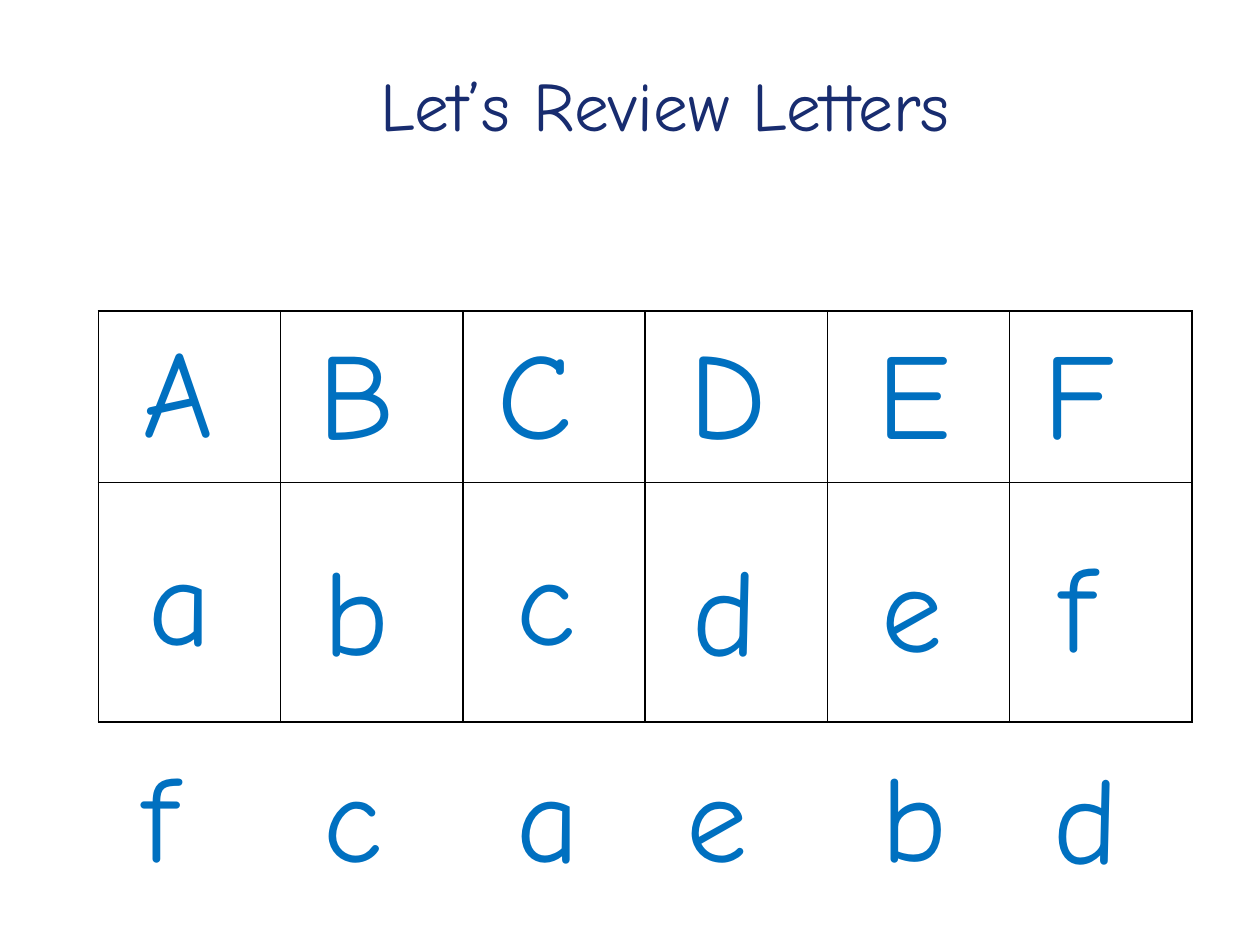
from lxml import etree
from pptx import Presentation
from pptx.dml.color import RGBColor
from pptx.enum.text import MSO_ANCHOR, MSO_AUTO_SIZE, PP_ALIGN
from pptx.oxml.ns import qn
from pptx.util import Inches, Pt

TITLE = "Let’s Review Letters"
LETTER_ROWS = [
    (2.47, [("A", 1.03, 1.38), ("B", 2.43, 1.38), ("C", 3.85, 1.38),
            ("D", 5.37, 1.38), ("E", 6.87, 1.17), ("F", 8.18, 1.53)]),
    (4.16, [("a", 1.08, 1.28), ("b", 2.47, 1.28), ("c", 4, 1.28),
            ("d", 5.4, 1.28), ("e", 6.9, 1.17), ("f", 8.31, 1.28)]),
    (5.82, [("f", 1.03, 1.38), ("c", 2.47, 0.71), ("a", 4, 0.71),
            ("e", 5.35, 0.97), ("b", 6.9, 0.78), ("d", 8.26, 0.67)]),
]
NUDGES = {("A", 2.47): -0.02, ("a", 4.16): -0.06, ("c", 4.16): -0.06,
          ("b", 4.16): 0.03, ("d", 4.16): 0.03, ("d", 5.82): 0.02}

FONT = "Comic Neue"
NAVY = RGBColor(0x18, 0x2C, 0x6F)
BLUE = RGBColor(0x00, 0x70, 0xC0)
BLACK = RGBColor(0, 0, 0)
LEFT = 0.78
LETTER_HEIGHT = 1.28
GRID_TOP, GRID_WIDTH = 2.47, 8.68
ROW_HEIGHTS = [1.36, 1.9]
COLUMNS = 6
BORDER_SIDES = ("a:lnL", "a:lnR", "a:lnT", "a:lnB")


def write(frame, text, size, color, align=PP_ALIGN.LEFT):
    frame.word_wrap = True
    frame.vertical_anchor = MSO_ANCHOR.TOP
    paragraph = frame.paragraphs[0]
    paragraph.alignment = align
    run = paragraph.add_run()
    run.text = text
    run.font.name = FONT
    run.font.size = Pt(size)
    run.font.color.rgb = color


def outline(cell):
    cell.fill.background()
    properties = cell._tc.get_or_add_tcPr()
    for position, side in enumerate(BORDER_SIDES):
        line = etree.Element(qn(side), w=str(Pt(1)))
        fill = etree.SubElement(line, qn("a:solidFill"))
        etree.SubElement(fill, qn("a:srgbClr"), val=str(BLACK))
        properties.insert(position, line)


def add_grid(slide):
    grid = slide.shapes.add_table(
        len(ROW_HEIGHTS), COLUMNS, Inches(LEFT), Inches(GRID_TOP),
        Inches(GRID_WIDTH), Inches(sum(ROW_HEIGHTS))).table
    grid.first_row = False
    grid.horz_banding = False
    for row, height in zip(grid.rows, ROW_HEIGHTS):
        row.height = Inches(height)
    for cell in grid.iter_cells():
        outline(cell)


def add_letters(slide):
    for row_top, letters in LETTER_ROWS:
        for letter, left, width in letters:
            top = row_top + NUDGES.get((letter, row_top), 0)
            frame = slide.shapes.add_textbox(
                Inches(left), Inches(top), Inches(width), Inches(LETTER_HEIGHT)).text_frame
            write(frame, letter, 70, BLUE)
            frame.auto_size = MSO_AUTO_SIZE.SHAPE_TO_FIT_TEXT


def main():
    deck = Presentation()
    deck.slide_width, deck.slide_height = Inches(10), Inches(7.5)
    slide = deck.slides.add_slide(deck.slide_layouts[5])
    title = slide.shapes.title
    title.left, title.top = Inches(LEFT), Inches(0.49)
    title.width, title.height = Inches(9), Inches(1.25)
    title.text_frame.margin_top = 0
    title.text_frame.auto_size = MSO_AUTO_SIZE.NONE
    write(title.text_frame, TITLE, 39.6, NAVY, align=PP_ALIGN.CENTER)
    add_grid(slide)
    add_letters(slide)
    deck.save("out.pptx")


if __name__ == "__main__":
    main()
